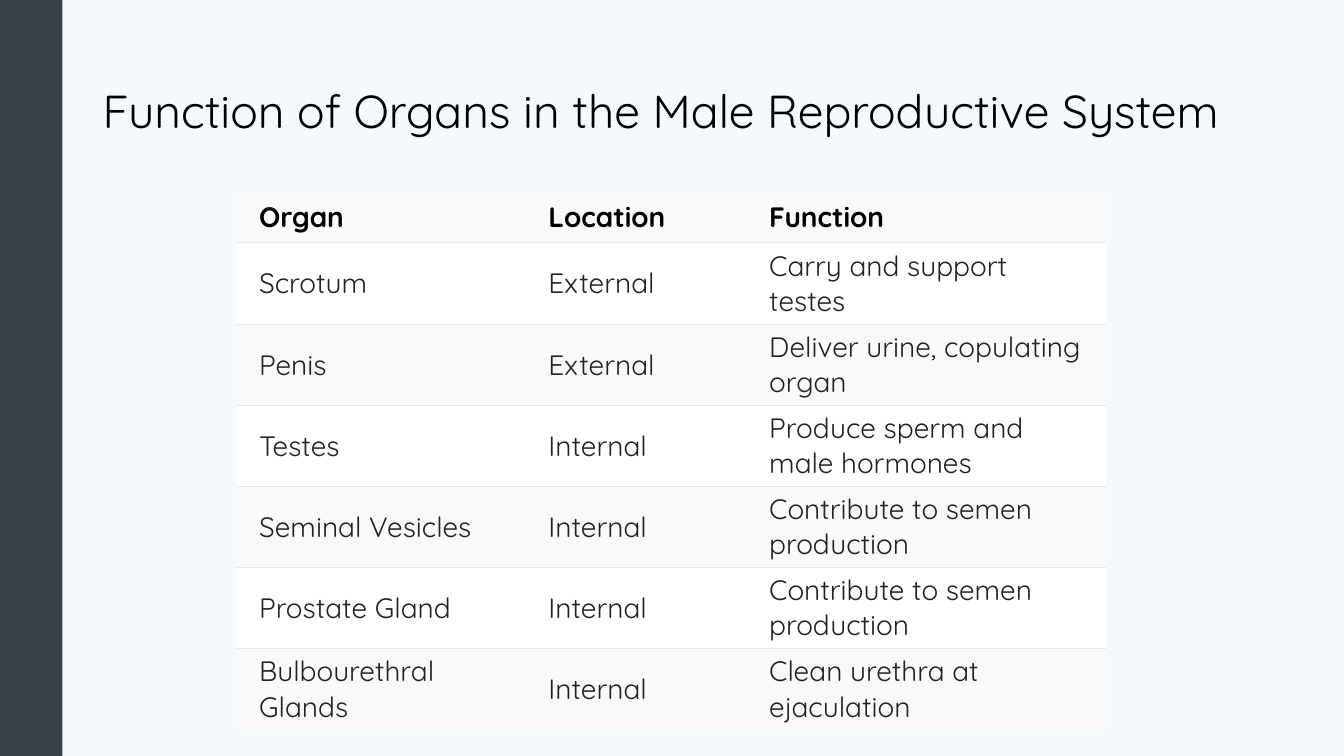
import pptx
import pptx.dml.color
import pptx.enum.shapes
import pptx.enum.text
import pptx.oxml
import pptx.oxml.ns
import pptx.util
from pptx.util import Inches

THEME = {
    "font": "Quicksand",
    "title_size": 33, "table_size": 20, "rule_width": 0.75,
    "background": "F4F9FC", "bar": "3A4047",
    "heading": "000000", "body": "222222",
    "shaded": "F9F9F9", "plain": "FFFFFF", "rule": "E7E7E7",
}

ROWS = [
    ("Organ", "Location", "Function"),
    ("Scrotum", "External", "Carry and support testes"),
    ("Penis", "External", "Deliver urine, copulating organ"),
    ("Testes", "Internal", "Produce sperm and male hormones"),
    ("Seminal Vesicles", "Internal", "Contribute to semen production"),
    ("Prostate Gland", "Internal", "Contribute to semen production"),
    ("Bulbourethral Glands", "Internal", "Clean urethra at ejaculation"),
]
COLUMN_WIDTHS = (2.87, 2.19, 3.56)
TABLE_HEIGHT, HEADER_HEIGHT = 5.35, 0.52
NO_GRID_STYLE = "{2D5ABB26-0587-4C30-8999-92F81FD0307C}"


def paint(fill, color):
    fill.solid()
    fill.fore_color.rgb = pptx.dml.color.RGBColor.from_string(THEME[color])


def write(p, text, size, color, bold=False):
    r = p.add_run()
    r.text = text
    formats = {"name": THEME["font"], "size": pptx.util.Pt(THEME[size]), "bold": bold}
    for name, value in formats.items():
        setattr(r.font, name, value)
    paint(r.font.fill, color)


prs = pptx.Presentation()
prs.slide_width, prs.slide_height = Inches(13.33), Inches(7.5)
s = prs.slides.add_slide(prs.slide_layouts[6])
paint(s.background.fill, "background")

# Side bar
sp = s.shapes.add_shape(pptx.enum.shapes.MSO_SHAPE.RECTANGLE,
                        0, 0, Inches(0.62), prs.slide_height)
sp.shadow.inherit = False
sp.line.fill.background()
paint(sp.fill, "bar")

# Title
tf = s.shapes.add_textbox(Inches(0.92), Inches(0.4), Inches(11.5), Inches(1.45)).text_frame
tf.word_wrap = True
tf.vertical_anchor = pptx.enum.text.MSO_ANCHOR.MIDDLE
p = tf.paragraphs[0]
p.line_spacing = 0.9
write(p, "Function of Organs in the Male Reproductive System", "title_size", "heading")

# Table grid
table = s.shapes.add_table(len(ROWS), len(COLUMN_WIDTHS), Inches(2.35), Inches(1.89),
                           Inches(sum(COLUMN_WIDTHS)), Inches(TABLE_HEIGHT)).table
table.horz_banding = False
style = table._tbl.tblPr.find(pptx.oxml.ns.qn("a:tableStyleId"))
style.text = NO_GRID_STYLE
for column, width in zip(table.columns, COLUMN_WIDTHS):
    column.width = Inches(width)
body_height = (TABLE_HEIGHT - HEADER_HEIGHT) / (len(ROWS) - 1)
for i, row in enumerate(table.rows):
    row.height = Inches(body_height if i else HEADER_HEIGHT)

# Table cells, with a thin rule between rows
for i, values in enumerate(ROWS):
    header = i == 0
    margin = Inches(0.08 if header else 0.05)
    formats = {
        "margin_left": Inches(0.22), "margin_right": Inches(0.22),
        "margin_top": margin, "margin_bottom": margin,
        "vertical_anchor": pptx.enum.text.MSO_ANCHOR.MIDDLE,
    }
    edges = (["lnT"] if i > 0 else []) + (["lnB"] if i < len(ROWS) - 1 else [])
    for j, text in enumerate(values):
        cell = table.cell(i, j)
        for name, value in formats.items():
            setattr(cell, name, value)
        write(cell.text_frame.paragraphs[0], text, "table_size",
              "heading" if header else "body", header)
        tcPr = cell._tc.get_or_add_tcPr()
        for edge in edges:
            tcPr.append(pptx.oxml.parse_xml(
                f'<a:{edge} {pptx.oxml.ns.nsdecls("a")} '
                f'w="{pptx.util.Pt(THEME["rule_width"])}"><a:solidFill>'
                f'<a:srgbClr val="{THEME["rule"]}"/></a:solidFill></a:{edge}>'))
        paint(cell.fill, "plain" if i % 2 else "shaded")

prs.save("out.pptx")
